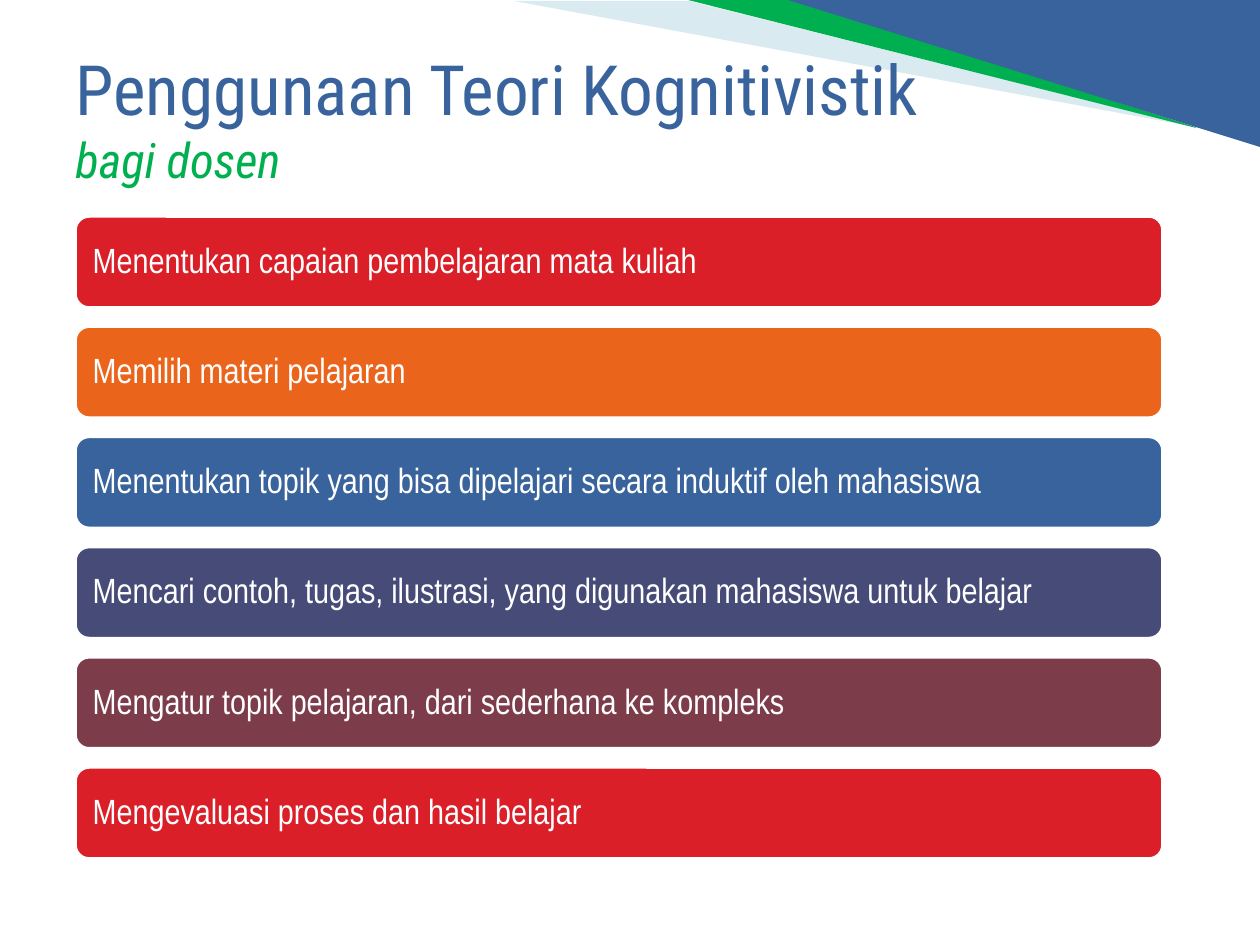
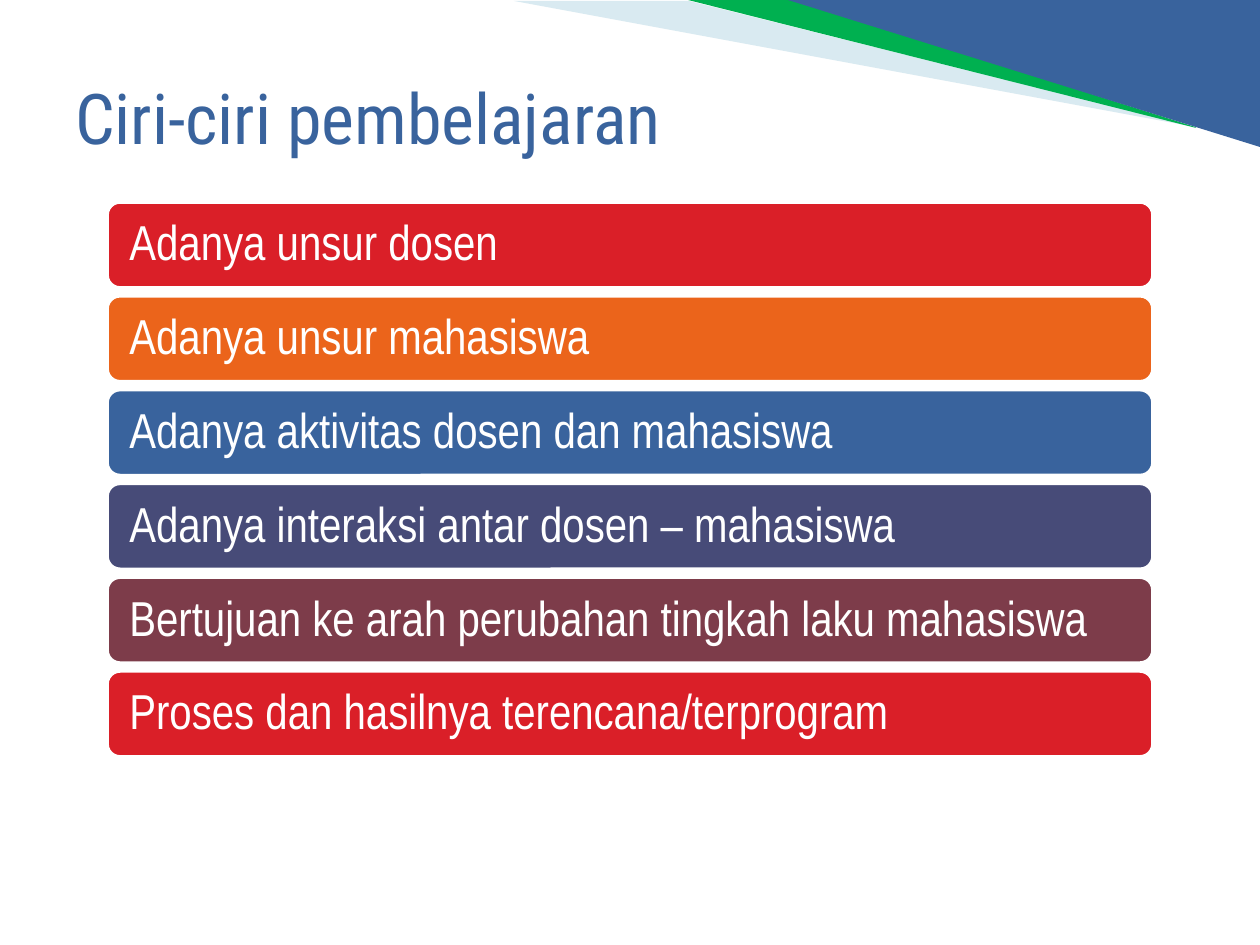
"""Build two slides on cognitive learning with rows of coloured bars."""
from lxml.etree import SubElement
from pptx import Presentation
from pptx.dml.color import RGBColor
from pptx.enum.shapes import MSO_SHAPE
from pptx.enum.text import MSO_ANCHOR, PP_ALIGN
from pptx.oxml.ns import qn
from pptx.util import Emu, Pt

WHITE = RGBColor(0xFF, 0xFF, 0xFF)
PALE = RGBColor(0xA0, 0xCB, 0xDC)
GREEN = RGBColor(0x00, 0xB0, 0x50)
BLUE = RGBColor(0x39, 0x63, 0x9D)
RED = RGBColor(0xDA, 0x1F, 0x28)
ORANGE = RGBColor(0xEB, 0x64, 0x1B)
INDIGO = RGBColor(0x47, 0x4B, 0x78)
PLUM = RGBColor(0x7D, 0x3C, 0x4A)
FILLS = [RED, ORANGE, BLUE, INDIGO, PLUM, RED]
SCALE = 914400 / 126

RAYS = [
    (PALE, [(514, 1), (689, 1), (1195, 127)]),
    (GREEN, [(688, 0), (795, 0), (1195, 127), (1196, 128)]),
]
SLIDES = [
    {
        "title": [
            ("Penggunaan Teori Kognitivistik", {"size": Pt(39.6)}, BLUE),
            ("bagi dosen", {"size": Pt(27.9), "italic": True}, GREEN),
        ],
        "box": (73, 214, 1092, 96), "span": 551, "pad": 15, "size": Pt(20),
        "bars": [
            "Menentukan capaian pembelajaran mata kuliah",
            "Memilih materi pelajaran",
            "Menentukan topik yang bisa dipelajari secara induktif oleh mahasiswa",
            "Mencari contoh, tugas, ilustrasi, yang digunakan mahasiswa untuk belajar",
            "Mengatur topik pelajaran, dari sederhana ke kompleks",
            "Mengevaluasi proses dan hasil belajar",
        ],
    },
    {
        "title": [("Ciri-ciri pembelajaran", {"size": Pt(40)}, BLUE)],
        "box": (105, 200, 1050, 90), "span": 469, "pad": 20, "size": Pt(28),
        "bars": [
            "Adanya unsur dosen",
            "Adanya unsur mahasiswa",
            "Adanya aktivitas dosen dan mahasiswa",
            "Adanya interaksi antar dosen – mahasiswa",
            "Bertujuan ke arah perubahan tingkah laku mahasiswa",
            "Proses dan hasilnya terencana/terprogram",
        ],
    },
]


def px(*nums):
    return [Emu(round(n * SCALE)) for n in nums]


def style(item, form, color=None):
    for key, val in form.items():
        setattr(item, key, val)
    if color is not None:
        item.color.rgb = color


deck = Presentation()
deck.slide_width, deck.slide_height = px(1260, 945)

for data in SLIDES:
    slide = deck.slides.add_slide(deck.slide_layouts[6])
    shapes = slide.shapes

    for color, points in RAYS:
        pen = shapes.build_freeform(*points[0], scale=SCALE)
        pen.add_line_segments(points[1:], close=True)
        ray = pen.convert_to_shape()
        ray.shadow.inherit = False
        ray.fill.solid()
        ray.fill.fore_color.rgb = color
        ray.line.fill.background()
        if color == PALE:
            tint = ray.fill._xPr.find(qn("a:solidFill"))[0]
            SubElement(tint, qn("a:alpha"), val="40000")

    wedge = shapes.add_shape(MSO_SHAPE.RIGHT_TRIANGLE, *px(788, 0, 472, 147))
    wedge.rotation = 180
    wedge.shadow.inherit = False
    wedge.fill.solid()
    wedge.fill.fore_color.rgb = BLUE
    wedge.line.fill.background()

    frame = shapes.add_textbox(*px(63, 38, 1134, 158)).text_frame
    style(frame, {"word_wrap": True, "vertical_anchor": MSO_ANCHOR.MIDDLE})
    head = frame.paragraphs[0]
    for num, (text, form, color) in enumerate(data["title"]):
        if num:
            head.add_line_break()
        run = head.add_run()
        run.text = text
        style(run.font, {"name": "Roboto Condensed", **form}, color)

    left, top, width, height = data["box"]
    pad = px(data["pad"])[0]
    for num, (text, color) in enumerate(zip(data["bars"], FILLS)):
        y = top + data["span"] * num / (len(FILLS) - 1)
        bar = shapes.add_shape(MSO_SHAPE.ROUNDED_RECTANGLE, *px(left, y, width, height))
        bar.shadow.inherit = False
        bar.fill.solid()
        bar.fill.fore_color.rgb = color
        style(bar.line, {"width": Pt(4.33)}, WHITE)
        frame = bar.text_frame
        style(frame, {
            "word_wrap": True, "vertical_anchor": MSO_ANCHOR.MIDDLE,
            "margin_left": pad, "margin_right": pad,
            "margin_top": pad, "margin_bottom": pad,
        })
        line = frame.paragraphs[0]
        style(line, {"alignment": PP_ALIGN.LEFT, "line_spacing": 0.9})
        run = line.add_run()
        run.text = text
        style(run.font, {"name": "Arial Narrow", "size": data["size"]}, WHITE)

deck.save("out.pptx")
